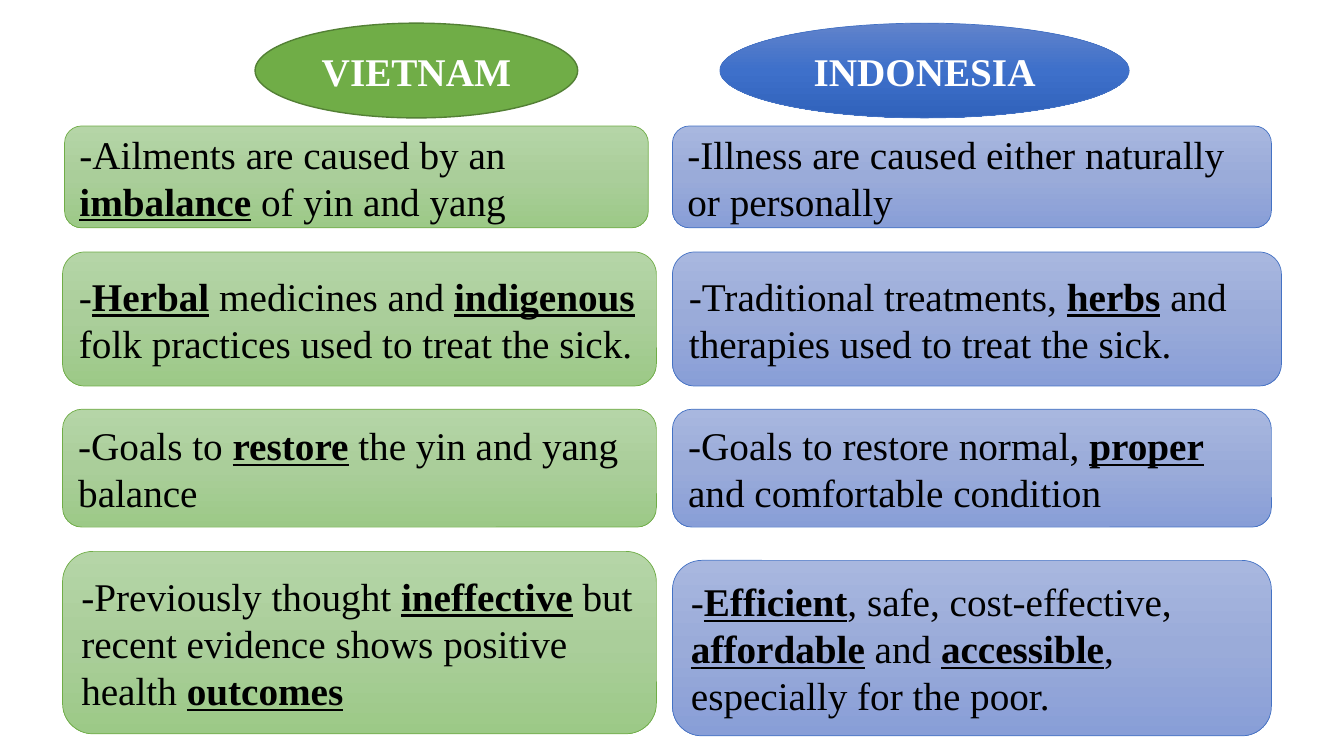
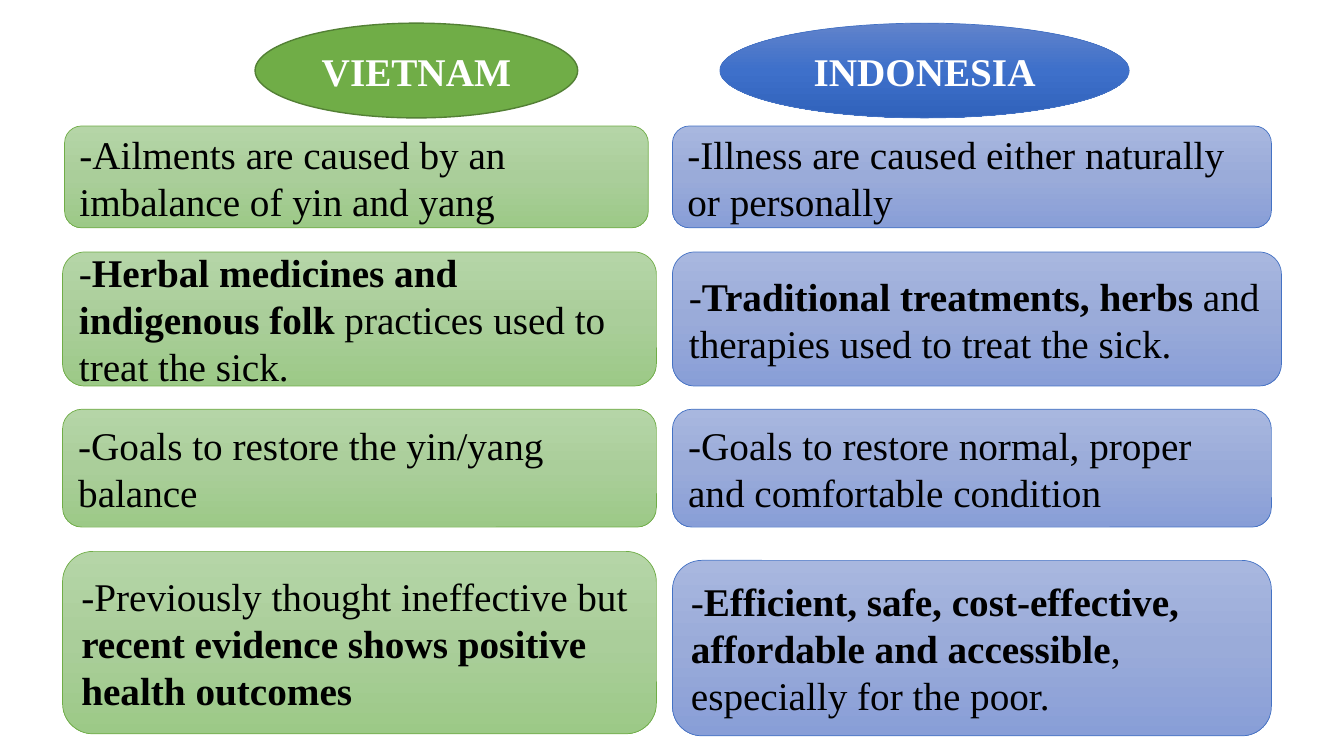
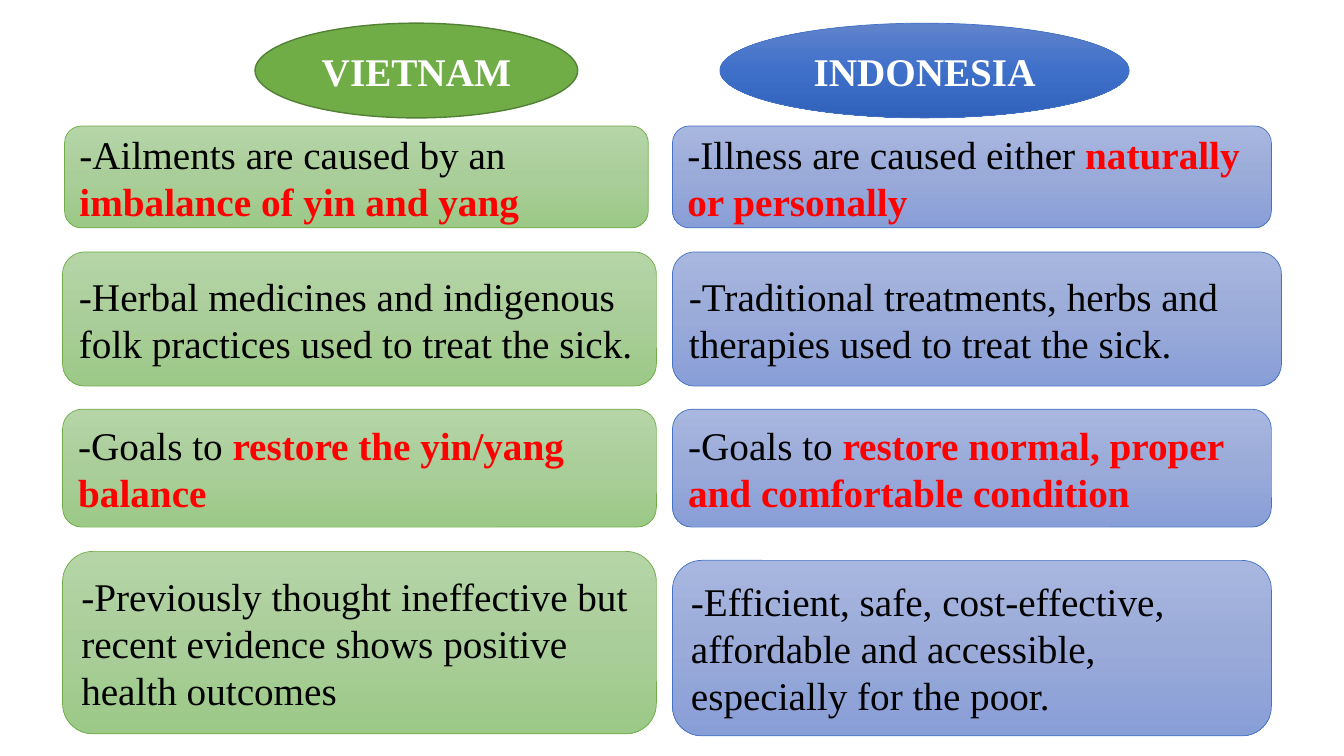
"""Build three slides comparing traditional medicine in Vietnam and Indonesia."""
from copy import deepcopy
from dataclasses import dataclass

from pptx import Presentation
from pptx.dml.color import RGBColor
from pptx.enum.shapes import MSO_SHAPE
from pptx.enum.text import MSO_ANCHOR, PP_ALIGN
from pptx.oxml.ns import qn
from pptx.util import Inches, Pt

OVAL = MSO_SHAPE.OVAL
ROUNDED = MSO_SHAPE.ROUNDED_RECTANGLE
MIDDLE = MSO_ANCHOR.MIDDLE
LEFT = PP_ALIGN.LEFT
CENTER = PP_ALIGN.CENTER
BLANK_LAYOUT = 6
MARK = "*"


@dataclass(frozen=True)
class Theme:
    """Colours, font and sizes shared by all slides."""
    font: str = "Times New Roman"
    text_size: float = 28
    thin_line: float = 0.5
    heading_line: float = 1
    text: str = "000000"
    heading_text: str = "FFFFFF"
    highlight: str = "FF0000"
    green: str = "70AD47"
    dark_green: str = "538035"
    blue: str = "4472C4"
    green_fade: tuple = ("B5D5A7", "AACE9A", "9CC987")
    blue_fade: tuple = ("A8B7DF", "9AABD9", "889ED7")
    heading_fade: tuple = ("6183CB", "3E70CA", "3062BB")


THEME = Theme()


@dataclass(frozen=True)
class Column:
    """The look and places of one country's heading and cards."""
    name: str
    heading_frame: tuple
    heading_colours: tuple
    heading_line: tuple
    card_colours: tuple
    card_line: tuple
    card_frames: tuple


COLUMNS = (
    Column(
        "VIETNAM", (2.53, 0.23, 3.2, 0.94),
        (THEME.green,), (THEME.dark_green, THEME.heading_line),
        THEME.green_fade, (THEME.green, THEME.thin_line),
        ((0.64, 1.25, 5.79, 1.01), (0.62, 2.5, 5.89, 1.33),
         (0.62, 4.06, 5.89, 1.17), (0.62, 5.47, 5.89, 1.81)),
    ),
    Column(
        "INDONESIA", (7.14, 0.23, 4.06, 0.94),
        THEME.heading_fade, (THEME.blue, THEME.thin_line),
        THEME.blue_fade, (THEME.blue, THEME.thin_line),
        ((6.67, 1.25, 5.94, 1.01), (6.67, 2.5, 6.04, 1.33),
         (6.67, 4.06, 5.94, 1.17), (6.67, 5.56, 5.94, 1.74)),
    ),
)

SLIDES = (
    ({"bold": True, "underline": True}, THEME.text, (
        ("-Ailments are caused by an *imbalance* of yin and yang",
         "-*Herbal* medicines and *indigenous* folk practices used to treat the sick.",
         "-Goals to *restore* the yin and yang balance",
         "-Previously thought *ineffective* but recent evidence shows positive health *outcomes*"),
        ("-Illness are caused either naturally or personally",
         "-Traditional treatments, *herbs* and therapies used to treat the sick.",
         "-Goals to restore normal, *proper* and comfortable condition",
         "-*Efficient*, safe, cost-effective, *affordable* and *accessible*, especially for the poor."),
    )),
    ({"bold": True}, THEME.text, (
        ("-Ailments are caused by an imbalance of yin and yang",
         "-*Herbal medicines and indigenous folk *practices used to treat the sick.",
         "-Goals to restore the yin/yang balance",
         "-Previously thought ineffective but *recent evidence shows positive health outcomes*"),
        ("-Illness are caused either naturally or personally",
         "-*Traditional treatments, herbs *and therapies used to treat the sick.",
         "-Goals to restore normal, proper and comfortable condition",
         "-*Efficient, safe, cost-effective, affordable and accessible*, especially for the poor."),
    )),
    ({"bold": True}, THEME.highlight, (
        ("-Ailments are caused by an *imbalance of yin and yang*",
         "-Herbal medicines and indigenous folk practices used to treat the sick.",
         "-Goals to *restore the yin/yang balance*",
         "-Previously thought ineffective but recent evidence shows positive health outcomes"),
        ("-Illness are caused either *naturally or personally*",
         "-Traditional treatments, herbs and therapies used to treat the sick.",
         "-Goals to *restore normal, proper and comfortable condition*",
         "-Efficient, safe, cost-effective, affordable and accessible, especially for the poor."),
    )),
)


class ComparisonDeck:
    """Holds the theme and the current slide, and draws each kind of element."""

    def __init__(self, theme):
        """Start an empty widescreen deck."""
        self.theme = theme
        self.deck = Presentation()
        self.deck.slide_width = Inches(13.33)
        self.deck.slide_height = Inches(7.5)
        self.slide = None

    def add_slide(self):
        """Add a blank slide and make it current."""
        self.slide = self.deck.slides.add_slide(self.deck.slide_layouts[BLANK_LAYOUT])

    def paint(self, shape, colours):
        """Fill a shape with one colour or a downward fade."""
        fill = shape.fill
        if len(colours) == 1:
            fill.solid()
            fill.fore_color.rgb = RGBColor.from_string(colours[0])
            return
        fill.gradient()
        fill.gradient_angle = 270
        stops = shape._element.spPr.find(".//" + qn("a:gsLst"))
        for _ in range(len(colours) - len(stops)):
            stops.append(deepcopy(stops[0]))
        for index, (stop, colour) in enumerate(zip(fill.gradient_stops, colours)):
            stop.position = index / (len(colours) - 1)
            stop.color.rgb = RGBColor.from_string(colour)

    def add_box(self, kind, frame, colours, line, alignment):
        """Draw a filled, outlined shape and return its paragraph."""
        box = self.slide.shapes.add_shape(kind, *map(Inches, frame))
        box.shadow.inherit = False
        self.paint(box, colours)
        line_colour, line_width = line
        box.line.color.rgb = RGBColor.from_string(line_colour)
        box.line.width = Pt(line_width)
        box.text_frame.word_wrap = True
        box.text_frame.vertical_anchor = MIDDLE
        para = box.text_frame.paragraphs[0]
        para.alignment = alignment
        return para

    def add_span(self, para, text, colour, emphasis):
        """Add a run of text with the given emphasis."""
        span = para.add_run()
        span.text = text
        values = {"name": self.theme.font, "size": Pt(self.theme.text_size), **emphasis}
        for name, value in values.items():
            setattr(span.font, name, value)
        span.font.color.rgb = RGBColor.from_string(colour)

    def add_heading(self, column):
        """Draw the oval that names a column."""
        para = self.add_box(OVAL, column.heading_frame, column.heading_colours,
                            column.heading_line, CENTER)
        self.add_span(para, column.name, self.theme.heading_text, {"bold": True})

    def add_card(self, column, frame, text, emphasis, emphasis_colour):
        """Draw a rounded card whose marked words are emphasised."""
        para = self.add_box(ROUNDED, frame, column.card_colours, column.card_line, LEFT)
        for index, part in enumerate(text.split(MARK)):
            marked = index % 2 == 1
            if part:
                self.add_span(para, part, emphasis_colour if marked else self.theme.text,
                              emphasis if marked else {})


def main():
    """Build and save the deck."""
    builder = ComparisonDeck(THEME)
    for emphasis, emphasis_colour, texts in SLIDES:
        builder.add_slide()
        for column, column_texts in zip(COLUMNS, texts):
            builder.add_heading(column)
            for frame, text in zip(column.card_frames, column_texts):
                builder.add_card(column, frame, text, emphasis, emphasis_colour)
    builder.deck.save("out.pptx")


if __name__ == "__main__":
    main()
